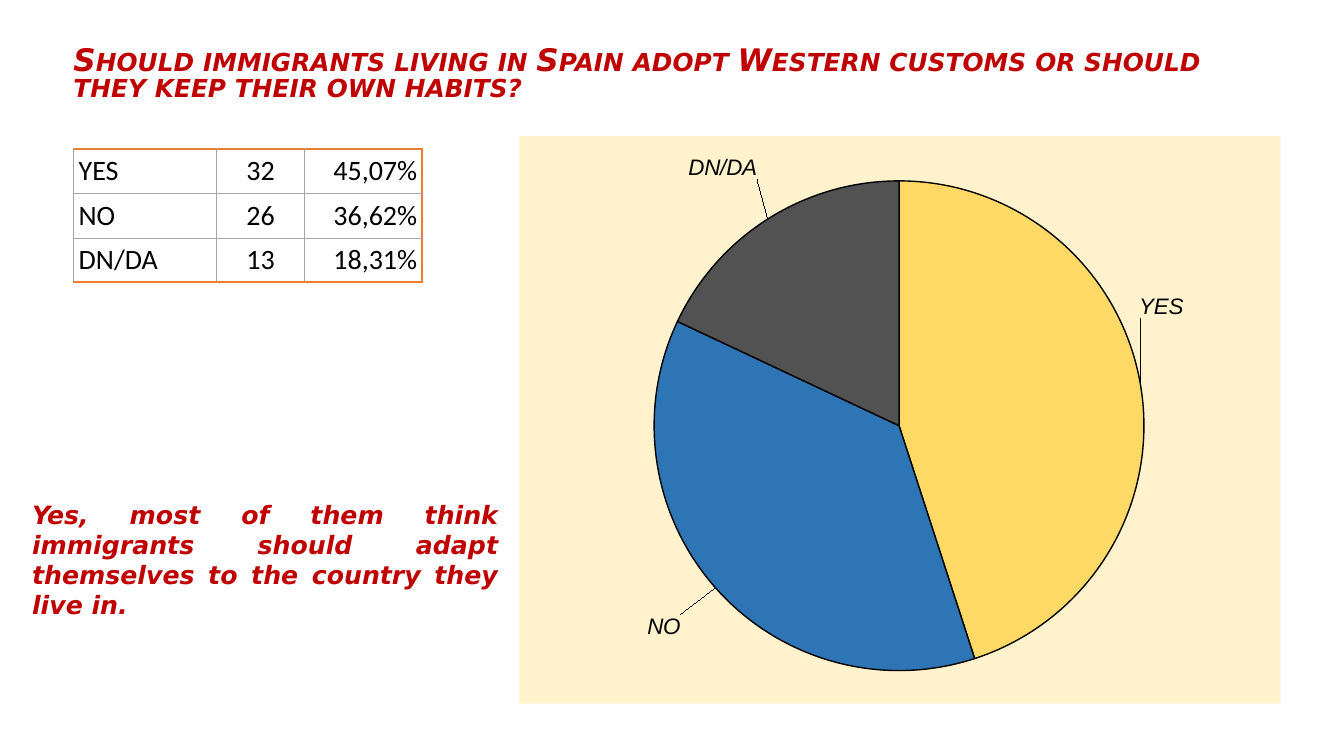
from lxml.etree import SubElement
from pptx import Presentation
from pptx.chart.data import CategoryChartData
from pptx.dml.color import RGBColor
from pptx.enum.chart import XL_CHART_TYPE
from pptx.enum.text import MSO_ANCHOR, PP_ALIGN
from pptx.oxml import parse_xml
from pptx.oxml.ns import nsdecls, qn
from pptx.util import Inches, Pt

THEME = {
    "accent": "C00000", "ink": "000000", "panel": "FFF2CC",
    "edge": "ED7D31", "grid": "A5A5A5",
    "slices": ["FFD966", "2E75B6", "525252"],
    "heading": "DejaVu Sans", "body": "Calibri", "chart": "Arial",
    "title_size": 22.2, "comment_size": 18, "table_size": 20, "label_size": 16,
}


def add_span(para, text, face, size, color, strong=False):
    span = para.add_run()
    span.text = text
    span.font.name, span.font.size = face, Pt(size)
    span.font.bold = span.font.italic = strong
    span.font.color.rgb = RGBColor.from_string(color)
    return span


def add_box(page, left, top, width, height, text, size):
    box = page.shapes.add_textbox(*map(Inches, (left, top, width, height)))
    box.text_frame.word_wrap = True
    para = box.text_frame.paragraphs[0]
    span = add_span(para, text, THEME["heading"], size, THEME["accent"], strong=True)
    return box.text_frame, para, span


deck = Presentation()
deck.slide_width, deck.slide_height = Inches(13.33), Inches(7.5)
page = deck.slides.add_slide(deck.slide_layouts[6])

# Question in small capitals
frame, para, span = add_box(
    page, 0.63, 0.42, 11.88, 0.68,
    "Should immigrants living in Spain adopt Western customs or should they keep their own habits?",
    THEME["title_size"])
frame.vertical_anchor = MSO_ANCHOR.MIDDLE
para.line_spacing = 0.7
span.font._element.set("cap", "small")

# Comment
frame, para, span = add_box(
    page, 0.22, 4.9, 4.82, 1.31,
    "Yes, most of them think immigrants should adapt themselves to the country they live in.",
    THEME["comment_size"])
para.alignment = PP_ALIGN.JUSTIFY

# Table of answers
answers = [("YES", "32", "45,07%"), ("NO", "26", "36,62%"), ("DN/DA", "13", "18,31%")]
columns = [(1.42, PP_ALIGN.LEFT), (0.87, PP_ALIGN.CENTER), (1.17, PP_ALIGN.RIGHT)]
row_height = 0.44
last = len(answers) - 1
table = page.shapes.add_table(
    len(answers), len(columns), Inches(0.73), Inches(1.48),
    Inches(sum(width for width, _ in columns)), Inches(row_height * len(answers))).table
table.first_row = table.horz_banding = False
for column, (width, _) in zip(table.columns, columns):
    column.width = Inches(width)
for r, answer in enumerate(answers):
    table.rows[r].height = Inches(row_height)
    for c, text in enumerate(answer):
        cell = table.cell(r, c)
        cell.margin_left = cell.margin_right = Inches(0.05)
        cell.margin_top = cell.margin_bottom = 0
        cell.vertical_anchor = MSO_ANCHOR.MIDDLE
        para = cell.text_frame.paragraphs[0]
        para.alignment = columns[c][1]
        add_span(para, text, THEME["body"], THEME["table_size"], THEME["ink"])
        # Accent edge on the outside, thin grid inside
        outer = {"lnL": False, "lnR": c == len(columns) - 1, "lnT": r == 0, "lnB": r == last}
        for side, is_edge in outer.items():
            line = SubElement(cell._tc.get_or_add_tcPr(), qn(f"a:{side}"),
                              w=str(Pt(1.5 if is_edge else 0.5)))
            fill = SubElement(line, qn("a:solidFill"))
            SubElement(fill, qn("a:srgbClr"), val=THEME["edge" if is_edge else "grid"])
        cell.fill.background()

# Pie chart
data = CategoryChartData()
data.categories = [answer[0] for answer in answers]
data.add_series("Series 1", (45, 37, 18))
chart = page.shapes.add_chart(
    XL_CHART_TYPE.PIE, Inches(5.15), Inches(1.35), Inches(7.55), Inches(5.63), data).chart
chart.has_legend = chart.has_title = False
chart.font.name, chart.font.size = THEME["chart"], Pt(10)
chart.font.color.rgb = RGBColor.from_string(THEME["ink"])
plot = chart.plots[0]
plot.vary_by_categories = True
for index, color in enumerate(THEME["slices"]):
    shape = plot.series[0].points[index].format
    shape.fill.solid()
    shape.fill.fore_color.rgb = RGBColor.from_string(color)
    shape.line.color.rgb = RGBColor.from_string(THEME["ink"])
    shape.line.width = Pt(1)

# Chart panel and plot area
panel = parse_xml(
    f'<c:spPr {nsdecls("c", "a")}><a:solidFill><a:srgbClr val="{THEME["panel"]}"/></a:solidFill>'
    '<a:ln><a:noFill/></a:ln></c:spPr>')
chart._chartSpace.find(qn("c:chart")).addnext(panel)
area = chart._chartSpace.find(qn("c:chart")).find(qn("c:plotArea"))
for layout in area.findall(qn("c:layout")):
    area.remove(layout)
area.insert(0, parse_xml(
    f'<c:layout {nsdecls("c")}><c:manualLayout><c:layoutTarget val="inner"/>'
    '<c:xMode val="edge"/><c:yMode val="edge"/><c:x val="0.025"/><c:y val="0.079"/>'
    '<c:w val="0.948"/><c:h val="0.863"/></c:manualLayout></c:layout>'))

# Category labels, shifted away from the slices by shares of the chart
shifts = [(-0.01, -0.12), (-0.04, 0.04), (-0.01, -0.06)]
style = (
    '<c:spPr><a:noFill/><a:ln><a:noFill/></a:ln></c:spPr>'
    f'<c:txPr><a:bodyPr/><a:p><a:pPr><a:defRPr sz="{THEME["label_size"] * 100}" b="0" i="1">'
    f'<a:solidFill><a:srgbClr val="{THEME["ink"]}"/></a:solidFill>'
    f'<a:latin typeface="{THEME["chart"]}"/></a:defRPr></a:pPr></a:p></c:txPr>'
    '<c:dLblPos val="outEnd"/><c:showLegendKey val="0"/><c:showVal val="0"/>'
    '<c:showCatName val="1"/><c:showSerName val="0"/><c:showPercent val="0"/>'
    '<c:showBubbleSize val="0"/>')
labels = "".join(
    f'<c:dLbl><c:idx val="{index}"/><c:layout><c:manualLayout><c:x val="{x}"/><c:y val="{y}"/>'
    f'</c:manualLayout></c:layout>{style}</c:dLbl>'
    for index, (x, y) in enumerate(shifts))
series = plot.series[0]._element
series.find(qn("c:cat")).addprevious(parse_xml(
    f'<c:dLbls {nsdecls("c", "a")}>{labels}{style}<c:showLeaderLines val="1"/></c:dLbls>'))

deck.save("out.pptx")
